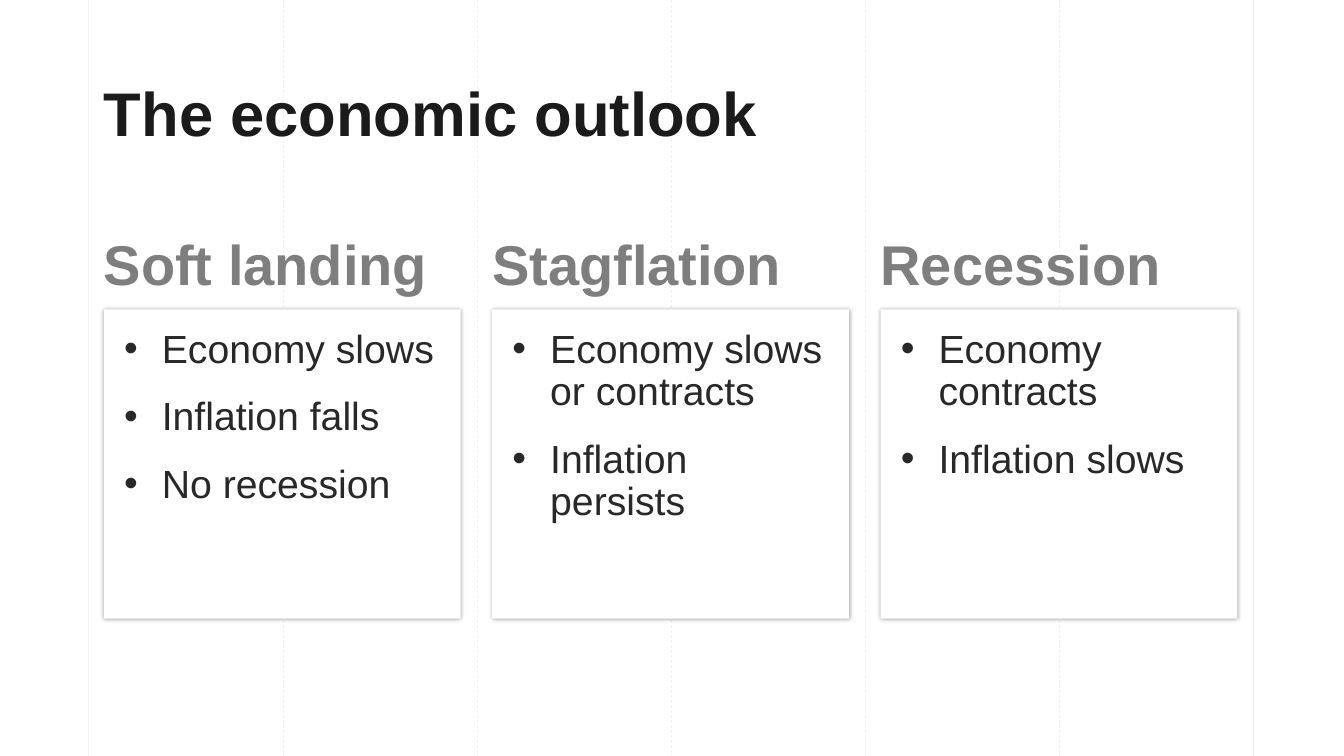
from lxml.etree import SubElement
from pptx import Presentation
from pptx.dml.color import RGBColor
from pptx.enum.dml import MSO_LINE
from pptx.enum.shapes import MSO_CONNECTOR
from pptx.enum.text import MSO_ANCHOR, MSO_AUTO_SIZE, PP_ALIGN
from pptx.oxml.ns import qn
from pptx.util import Pt

DASH = MSO_LINE.DASH
LINE = MSO_CONNECTOR.STRAIGHT
TOP = MSO_ANCHOR.TOP
FIXED = MSO_AUTO_SIZE.NONE
LEFT = PP_ALIGN.LEFT

WIDE, HIGH = 960, 540
GRID, STEP = 63.4, 138.7
EDGE, WIDTH = 74.2, 254.9
COLUMNS = [
    ("Soft landing", ["Economy slows", "Inflation falls", "No recession"]),
    ("Stagflation", ["Economy slows or contracts", "Inflation persists"]),
    ("Recession", ["Economy contracts", "Inflation slows"]),
]


def color(code):
    return RGBColor.from_string(code)


def assign(item, values):
    for name, value in values.items():
        setattr(item, name, value)


class Deck:
    """Holds the text styles and the current slide."""

    styles = {
        "title": {"size": 44, "bold": True, "color": "1C1B1C", "gap": 0.8, "after": 0},
        "head": {"size": 40, "bold": True, "color": "7E7E7E", "gap": 0.85, "after": 0},
        "list": {"size": 28, "bold": False, "color": "282828", "gap": 0.9, "after": 18},
    }

    def __init__(self):
        self.show = Presentation()
        assign(self.show, {"slide_width": Pt(WIDE), "slide_height": Pt(HIGH)})
        self.slide = self.show.slides.add_slide(self.show.slide_layouts[4])
        self.shapes = self.slide.shapes
        self.bodies = list(self.slide.placeholders)[1:]

    def place(self, shape, box):
        names = ("left", "top", "width", "height")
        assign(shape, dict(zip(names, map(Pt, box))))

    def fill(self, shape, lines, kind, pads):
        style = self.styles[kind]
        frame = shape.text_frame
        names = ("margin_left", "margin_top", "margin_right", "margin_bottom")
        assign(frame, dict(zip(names, map(Pt, pads))))
        assign(frame, {"word_wrap": True, "auto_size": FIXED, "vertical_anchor": TOP})
        for i, line in enumerate(lines):
            para = frame.add_paragraph() if i else frame.paragraphs[0]
            if kind == "list":
                self.bullet(para)
            assign(para, {"alignment": LEFT, "line_spacing": style["gap"],
                          "space_before": Pt(0), "space_after": Pt(style["after"])})
            run = para.add_run()
            run.text = line
            assign(run.font, {"name": "Arial", "size": Pt(style["size"]),
                              "bold": style["bold"]})
            run.font.color.rgb = color(style["color"])

    def bullet(self, para):
        props = para._p.get_or_add_pPr()
        props.set("marL", str(Pt(27)))
        props.set("indent", str(Pt(-27)))
        SubElement(props, qn("a:buFont")).set("typeface", "Arial")
        SubElement(props, qn("a:buChar")).set("char", "•")

    def shade(self, shape):
        effect = SubElement(shape._element.spPr, qn("a:effectLst"))
        outer = SubElement(effect, qn("a:outerShdw"))
        outer.set("blurRad", str(Pt(3)))
        tint = SubElement(outer, qn("a:srgbClr"))
        tint.set("val", "000000")
        SubElement(tint, qn("a:alpha")).set("val", "40000")

    def guide(self, left, dashed):
        line = self.shapes.add_connector(LINE, Pt(left), Pt(0), Pt(left), Pt(HIGH))
        line.line.color.rgb = color("F2F2F2")
        line.line.width = Pt(0.5)
        if dashed:
            line.line.dash_style = DASH
        SubElement(line._element.spPr, qn("a:effectLst"))
        self.shapes._spTree.insert(2, line._element)

    def title(self, text):
        self.place(self.shapes.title, (EDGE, 63.4, 810, 33.8))
        self.fill(self.shapes.title, [text], "title", (0, 0, 0, 0))

    def head(self, left, text):
        box = self.shapes.add_textbox(0, 0, 0, 0)
        self.place(box, (left, 157, WIDTH, 42.5))
        self.fill(box, [text], "head", (0, 14.4, 0, 0))

    def card(self, left, lines):
        card = self.bodies.pop(0)
        self.place(card, (left, 221, WIDTH, 221))
        card.fill.solid()
        card.fill.fore_color.rgb = color("FFFFFF")
        card.line.fill.background()
        self.shade(card)
        self.fill(card, lines, "list", (14.4, 14.4, 14.4, 14.4))

    def save(self):
        for spare in self.bodies:
            spare._element.getparent().remove(spare._element)
        self.show.save("out.pptx")


def main():
    deck = Deck()
    for i in range(7):
        deck.guide(GRID + i * STEP, 0 < i < 6)
    deck.title("The economic outlook")
    for i, (head, lines) in enumerate(COLUMNS):
        left = EDGE + 2 * STEP * i
        deck.card(left, lines)
        deck.head(left, head)
    deck.save()


if __name__ == "__main__":
    main()
